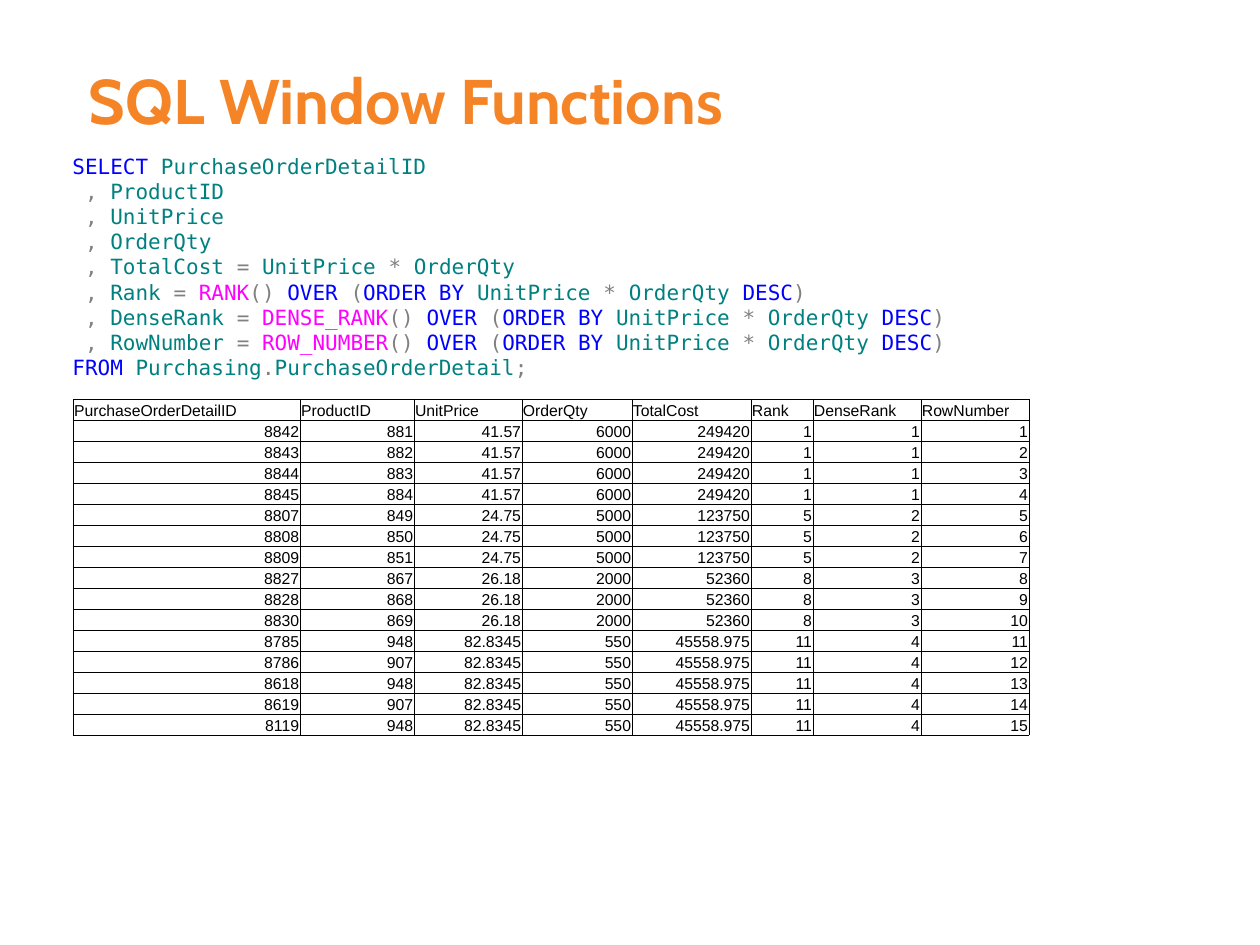
import pptx
import pptx.dml.color
import pptx.enum.text
import pptx.oxml
import pptx.oxml.ns
import pptx.util

RGBColor = pptx.dml.color.RGBColor
ANCHOR = pptx.enum.text.MSO_ANCHOR
ALIGN = pptx.enum.text.PP_ALIGN
AUTO_SIZE = pptx.enum.text.MSO_AUTO_SIZE

ORANGE = RGBColor(0xF5, 0x84, 0x27)
BLUE = RGBColor(0x00, 0x00, 0xFF)
TEAL = RGBColor(0x00, 0x80, 0x80)
GRAY = RGBColor(0x80, 0x80, 0x80)
MAGENTA = RGBColor(0xFF, 0x00, 0xFF)
BLACK = RGBColor(0x00, 0x00, 0x00)

PX_PER_INCH = 126
TITLE_FONT = {"name": "Cabin", "size": pptx.util.Pt(36), "bold": True}
CODE_FONT = {"name": "DejaVu Sans Mono", "size": pptx.util.Pt(12)}
CELL_FONT = {"name": "Arial", "size": pptx.util.Pt(9), "bold": False}

KEYWORDS = {"SELECT", "FROM", "OVER", "ORDER BY", "DESC"}
FUNCTIONS = {"RANK", "DENSE_RANK", "ROW_NUMBER"}
RANKING = " , |{} |= |{}|() |OVER |(|ORDER BY |UnitPrice |* |OrderQty |DESC|)"
QUERY = [
    "SELECT |PurchaseOrderDetailID",
    " , |ProductID",
    " , |UnitPrice",
    " , |OrderQty",
    " , |TotalCost |= |UnitPrice |* |OrderQty",
    RANKING.format("Rank", "RANK"),
    RANKING.format("DenseRank", "DENSE_RANK"),
    RANKING.format("RowNumber", "ROW_NUMBER"),
    "FROM |Purchasing|.|PurchaseOrderDetail|;",
]

HEADERS = ["PurchaseOrderDetailID", "ProductID", "UnitPrice", "OrderQty",
           "TotalCost", "Rank", "DenseRank", "RowNumber"]
COLUMN_WIDTHS = [227, 114, 108, 110, 119, 62, 108, 108]
ROW_HEIGHT = 21
TIED_ORDERS = [
    (("41.57", 6000, "249420", 1, 1),
     [(8842, 881), (8843, 882), (8844, 883), (8845, 884)]),
    (("24.75", 5000, "123750", 5, 2),
     [(8807, 849), (8808, 850), (8809, 851)]),
    (("26.18", 2000, "52360", 8, 3),
     [(8827, 867), (8828, 868), (8830, 869)]),
    (("82.8345", 550, "45558.975", 11, 4),
     [(8785, 948), (8786, 907), (8618, 948), (8619, 907), (8119, 948)]),
]


def px(n):
    return pptx.util.Emu(round(n * 914400 / PX_PER_INCH))


def set_attrs(obj, values):
    for name, value in values.items():
        setattr(obj, name, value)


def add_run(p, text, font, color):
    r = p.add_run()
    r.text = text
    set_attrs(r.font, font)
    r.font.color.rgb = color


def token_color(token):
    word = token.strip()
    if word in KEYWORDS:
        return BLUE
    if word in FUNCTIONS:
        return MAGENTA
    return TEAL if word.isalnum() else GRAY


def add_title(s, x, y, w, h):
    sp = s.shapes.add_textbox(px(x), px(y), px(w), px(h))
    tf = sp.text_frame
    set_attrs(tf, {"word_wrap": True, "vertical_anchor": ANCHOR.MIDDLE,
                   "margin_left": px(25), "margin_right": 0})
    add_run(tf.paragraphs[0], "SQL Window Functions", TITLE_FONT, ORANGE)


def add_query(s, x, y, w, h):
    sp = s.shapes.add_textbox(px(x), px(y), px(w), px(h))
    tf = sp.text_frame
    set_attrs(tf, {"word_wrap": True, "auto_size": AUTO_SIZE.SHAPE_TO_FIT_TEXT})
    for i, line in enumerate(QUERY):
        p = tf.add_paragraph() if i else tf.paragraphs[0]
        for token in line.split("|"):
            add_run(p, token, CODE_FONT, token_color(token))


def add_borders(cell):
    tc_pr = cell._tc.get_or_add_tcPr()
    for side in ("lnL", "lnR", "lnT", "lnB"):
        tc_pr.append(pptx.oxml.parse_xml(
            f'<a:{side} {pptx.oxml.ns.nsdecls("a")} w="3175">'
            f'<a:solidFill><a:srgbClr val="{BLACK}"/></a:solidFill></a:{side}>'))


def fill_cell(cell, text, align):
    set_attrs(cell, {"margin_left": px(1), "margin_right": px(1),
                     "margin_top": px(1), "margin_bottom": 0,
                     "vertical_anchor": ANCHOR.BOTTOM})
    add_borders(cell)
    cell.fill.background()
    p = cell.text_frame.paragraphs[0]
    p.alignment = align
    add_run(p, str(text), CELL_FONT, BLACK)


def result_rows():
    orders = [(*ids, *values) for values, group in TIED_ORDERS for ids in group]
    return [(*order, n) for n, order in enumerate(orders, 1)]


def add_results(s, x, y):
    rows = [HEADERS, *result_rows()]
    frame = s.shapes.add_table(len(rows), len(HEADERS), px(x), px(y),
                               px(sum(COLUMN_WIDTHS)), px(ROW_HEIGHT * len(rows)))
    table = frame.table
    set_attrs(table, {"first_row": False, "horz_banding": False})
    for column, width in zip(table.columns, COLUMN_WIDTHS):
        column.width = px(width)
    for i, values in enumerate(rows):
        table.rows[i].height = px(ROW_HEIGHT)
        for j, value in enumerate(values):
            fill_cell(table.cell(i, j), value, ALIGN.RIGHT if i else ALIGN.LEFT)


def main():
    prs = pptx.Presentation()
    set_attrs(prs, {"slide_width": px(1260), "slide_height": px(945)})
    s = prs.slides.add_slide(prs.slide_layouts[6])
    add_title(s, 64, 53, 796, 93)
    add_query(s, 60, 147, 1125, 242)
    add_results(s, 73, 399)
    prs.save("out.pptx")


if __name__ == "__main__":
    main()
